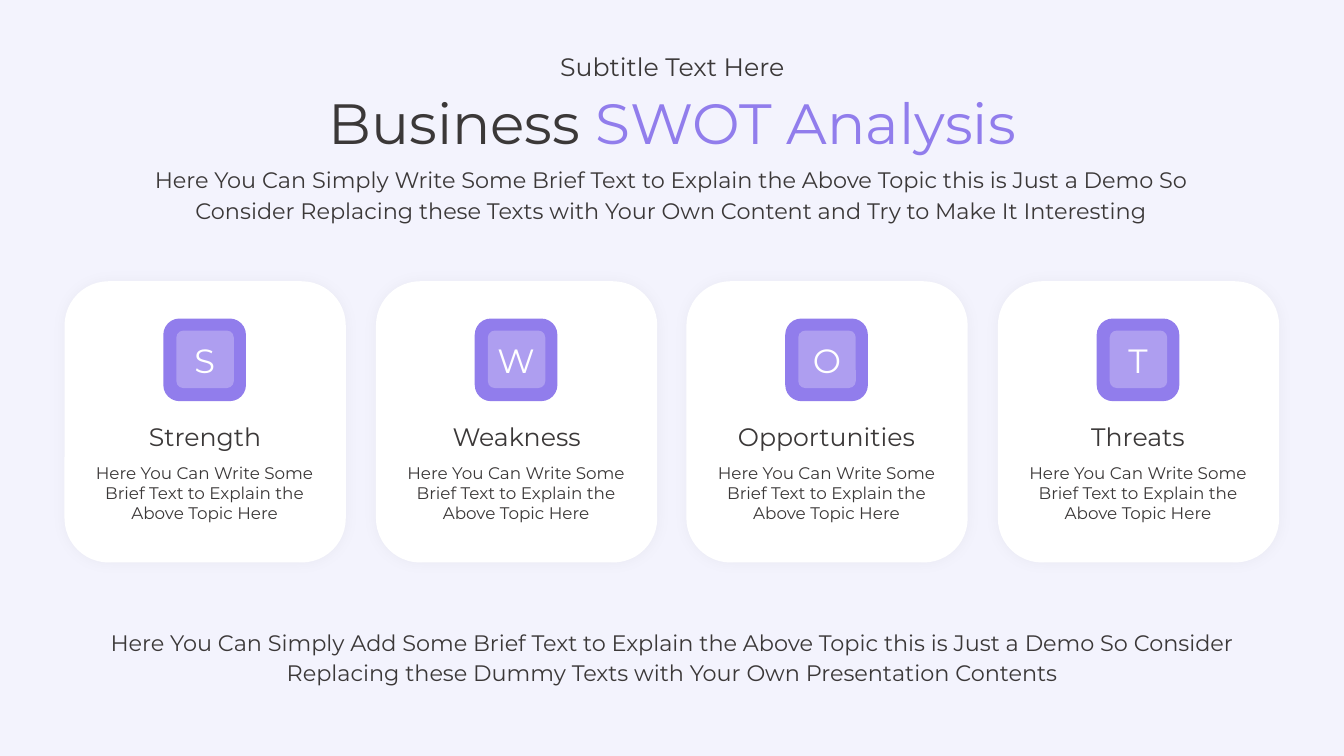
"""Builds a SWOT analysis slide with four cards."""
from dataclasses import dataclass

from lxml.etree import SubElement
from pptx import Presentation
from pptx.dml.color import RGBColor as RGB
from pptx.enum.shapes import MSO_SHAPE as SHAPE
from pptx.enum.text import MSO_ANCHOR as ANCHOR, MSO_AUTO_SIZE as FIT, PP_ALIGN as ALIGN
from pptx.oxml.ns import qn
from pptx.util import Emu, Pt

PX = 9144


@dataclass(frozen=True)
class Theme:
    """Colours, font and type sizes."""
    font: str = "Montserrat"
    back: str = "F3F3FD"
    ink: str = "3B3838"
    white: str = "FFFFFF"
    accent: str = "917DEC"
    light: str = "AE9EF0"
    title: float = 40.5
    letter: int = 24
    heading: int = 18
    body: int = 16
    small: int = 12
    leading: int = 22


class Deck:
    """Holds the theme and the current slide."""

    def __init__(self, theme):
        self.t = theme
        self.prs = Presentation()
        self.prs.slide_width, self.prs.slide_height = Emu(12192000), Emu(6858000)
        self.s = self.prs.slides.add_slide(self.prs.slide_layouts[5])
        fill = self.s.background.fill
        fill.solid()
        fill.fore_color.rgb = RGB.from_string(theme.back)

    def frame(self, sp):
        """Gives a text shape the common frame format."""
        tf = sp.text_frame
        form = {"word_wrap": False, "auto_size": FIT.SHAPE_TO_FIT_TEXT,
                "vertical_anchor": ANCHOR.TOP}
        for key, value in form.items():
            setattr(tf, key, value)
        return tf

    def style(self, p, size, colours, leading=1.0):
        """Formats a paragraph, taking one colour for each run."""
        p.alignment, p.line_spacing = ALIGN.CENTER, leading
        for r, colour in zip(p.runs, colours):
            for key, value in {"name": self.t.font, "size": Pt(size)}.items():
                setattr(r.font, key, value)
            r.font.color.rgb = RGB.from_string(colour)

    def title(self, box, parts):
        """Fills the title placeholder with coloured parts."""
        sp = self.s.shapes.title
        for key, value in zip(("left", "top", "width", "height"), box):
            setattr(sp, key, Emu(value * PX))
        p = self.frame(sp).paragraphs[0]
        for text, _ in parts:
            p.add_run().text = text
        self.style(p, self.t.title, [colour for _, colour in parts])

    def text(self, box, paragraphs, size, colour=None, leading=1.0):
        """Adds centred paragraphs, where a newline is a line break."""
        tf = self.frame(self.s.shapes.add_textbox(*(Emu(v * PX) for v in box)))
        for i, text in enumerate(paragraphs):
            p = tf.add_paragraph() if i else tf.paragraphs[0]
            p.text = text
            self.style(p, size, [colour or self.t.ink] * len(p.runs), leading)

    def tile(self, box, colour, radius, glow=False):
        """Adds a rounded square, with a soft shadow if asked."""
        sp = self.s.shapes.add_shape(SHAPE.ROUNDED_RECTANGLE, *(Emu(v * PX) for v in box))
        sp.adjustments[0] = radius
        sp.fill.solid()
        sp.fill.fore_color.rgb = RGB.from_string(colour)
        sp.line.fill.background()
        sp.shadow.inherit = False
        if glow:
            effects = sp._element.spPr.find(qn("a:effectLst"))
            shadow = SubElement(effects, qn("a:outerShdw"), blurRad=str(Pt(10)), dist="0",
                                dir="0", algn="ctr", rotWithShape="0")
            black = SubElement(shadow, qn("a:srgbClr"), val="000000")
            SubElement(black, qn("a:alpha"), val="4000")

    def card(self, x, letter, letter_w, heading, heading_w):
        """Adds a card with its letter tile, heading and description."""
        t, side = self.t, 279

        def centred(y, w, h):
            return x + (side - w) // 2, y, w, h

        self.tile(centred(279, side, side), t.white, 0.157, glow=True)
        self.text(centred(413, heading_w, 40), [heading], t.heading)
        self.tile(centred(316, 82, 82), t.accent, 0.196)
        self.tile(centred(328, 57, 57), t.light, 0.121)
        self.text(centred(332, letter_w, 50), [letter], t.letter, t.white)
        self.text(centred(454, 240, 71),
                  ["Here You Can Write Some", "Brief Text to Explain the", "Above Topic Here"],
                  t.small)


def main():
    """Builds and saves the slide."""
    t = Theme()
    deck = Deck(t)
    deck.title((285, 82, 764, 78), [("Business ", t.ink), ("SWOT Analysis", t.accent)])
    deck.text((542, 46, 250, 40), ["Subtitle Text Here"], t.heading)
    cards = [("S", 42, "Strength", 139), ("W", 60, "Weakness", 161),
             ("O", 49, "Opportunities", 208), ("T", 42, "Threats", 122)]
    first, last = 64, 990
    for i, card in enumerate(cards):
        deck.card(round(first + i * (last - first) / (len(cards) - 1)), *card)
    deck.text((83, 615, 1168, 70),
              ["Here You Can Simply Add Some Brief Text to Explain the Above Topic "
               "this is Just a Demo So Consider",
               "Replacing these Dummy Texts with Your Own Presentation Contents"],
              t.body, leading=Pt(t.leading))
    deck.text((122, 156, 1088, 70),
              ["Here You Can Simply Write Some Brief Text to Explain the Above Topic "
               "this is Just a Demo So\n"
               "Consider Replacing these Texts with Your Own Content and Try to Make It Interesting"],
              t.body, leading=Pt(t.leading))
    deck.prs.save("out.pptx")


if __name__ == "__main__":
    main()
